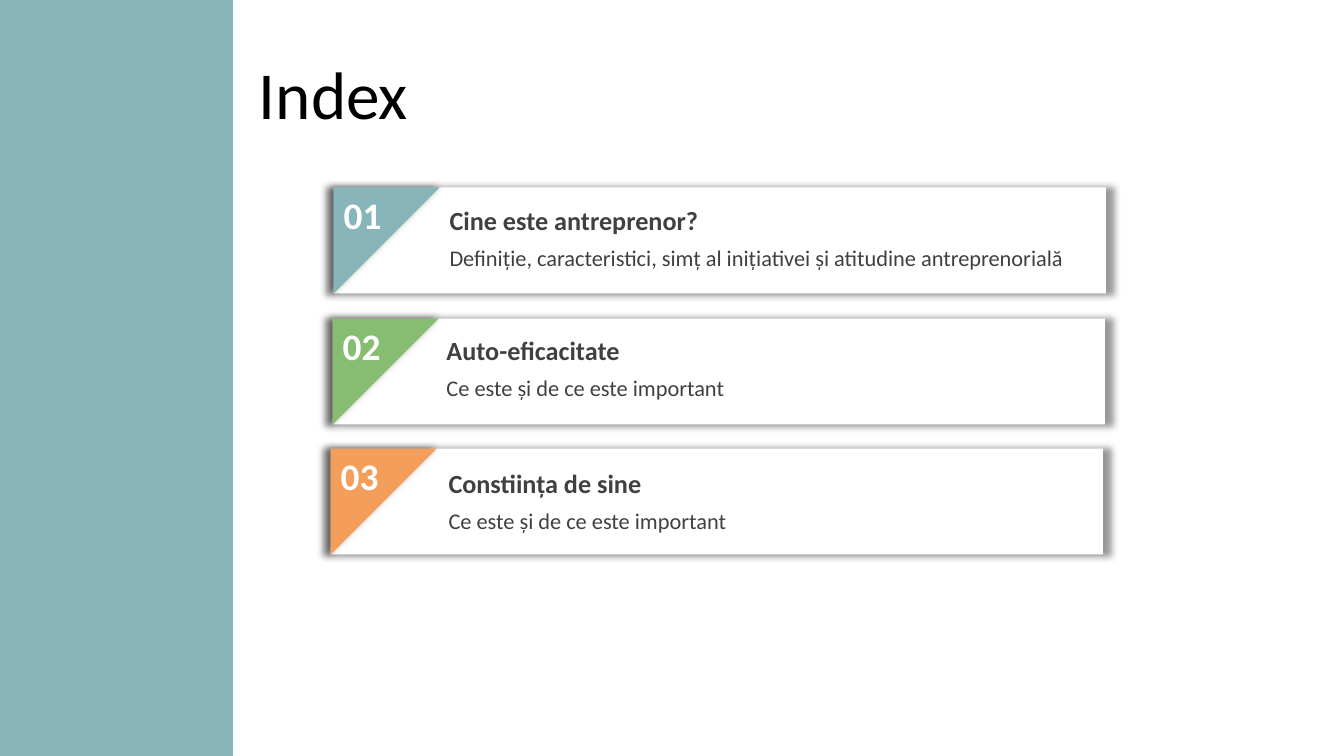
from lxml import etree
from pptx import Presentation
from pptx.dml.color import RGBColor
from pptx.enum import shapes, text
from pptx.oxml import ns
from pptx.util import Inches, Pt

TEAL = RGBColor(0x87, 0xB5, 0xBA)
GREEN = RGBColor(0x86, 0xBD, 0x70)
ORANGE = RGBColor(0xF3, 0x9E, 0x5A)
WHITE = RGBColor(0xFF, 0xFF, 0xFF)
BLACK = RGBColor(0, 0, 0)
GREY = RGBColor(0x40, 0x40, 0x40)

CARD_WIDTH, CARD_HEIGHT = 7.66, 1.05
CHAPTERS = [
    ("Cine este antreprenor?",
     "Definiție, caracteristici, simț al inițiativei și atitudine antreprenorială",
     TEAL, 3.31, 1.86, 4.36, 1.98),
    ("Auto-eficacitate", "Ce este și de ce este important",
     GREEN, 3.3, 3.16, 4.33, 3.27),
    ("Constiința de sine", "Ce este și de ce este important",
     ORANGE, 3.28, 4.45, 4.35, 4.59),
]


class IndexPage:
    """Draws styled elements on one slide."""

    font_name = "Calibri"

    def __init__(self, page):
        self.page = page

    def shape(self, kind, left, top, width, height, color, rotation=0):
        box = self.page.shapes.add_shape(
            kind, Inches(left), Inches(top), Inches(width), Inches(height))
        box.rotation = rotation
        box.shadow.inherit = False
        box.fill.solid()
        box.fill.fore_color.rgb = color
        box.line.fill.background()
        return box

    def glow(self, box):
        effects = box._element.spPr.find(ns.qn("a:effectLst"))
        shadow = etree.SubElement(
            effects, ns.qn("a:outerShdw"), blurRad=str(Pt(5)), dist="0",
            sx="102000", sy="102000", algn="ctr", rotWithShape="0")
        color = etree.SubElement(shadow, ns.qn("a:srgbClr"), val=str(BLACK))
        etree.SubElement(color, ns.qn("a:alpha"), val="40000")

    def label(self, words, left, top, width, height, size, color,
              bold=False, anchor=text.MSO_ANCHOR.TOP):
        box = self.page.shapes.add_textbox(
            Inches(left), Inches(top), Inches(width), Inches(height))
        frame = box.text_frame
        frame.word_wrap = True
        frame.vertical_anchor = anchor
        para = frame.paragraphs[0]
        para.text = words
        para.font.name = self.font_name
        para.font.size = Pt(size)
        para.font.bold = bold
        para.font.color.rgb = color

    def card(self, color, left, top):
        panel = self.shape(shapes.MSO_SHAPE.RECTANGLE, left, top,
                           CARD_WIDTH, CARD_HEIGHT, WHITE)
        corner = self.shape(shapes.MSO_SHAPE.RIGHT_TRIANGLE, left, top,
                            CARD_HEIGHT, CARD_HEIGHT, color, 90)
        self.glow(panel)
        self.glow(corner)

    def chapter(self, number, heading, summary, color, left, top, text_left, text_top):
        self.card(color, left, top)
        self.label(f"{number:02}", left, top, 0.78, 0.55, 26.7, WHITE, bold=True)
        self.label(heading, text_left, text_top, 6.41, 0.42, 18.7, GREY, bold=True)
        self.label(summary, text_left, text_top + 0.39, 6.41, 0.37, 16, GREY)


def main():
    deck = Presentation()
    deck.slide_width, deck.slide_height = Inches(13.33), Inches(7.5)
    index = IndexPage(deck.slides.add_slide(deck.slide_layouts[6]))
    index.shape(shapes.MSO_SHAPE.RECTANGLE, 0, 0, 2.31, 7.5, TEAL)
    index.label("Index", 2.47, 0.5, 9.61, 0.84, 48, BLACK,
                anchor=text.MSO_ANCHOR.MIDDLE)
    for number, chapter in enumerate(CHAPTERS, 1):
        index.chapter(number, *chapter)
    deck.save("out.pptx")


if __name__ == "__main__":
    main()
